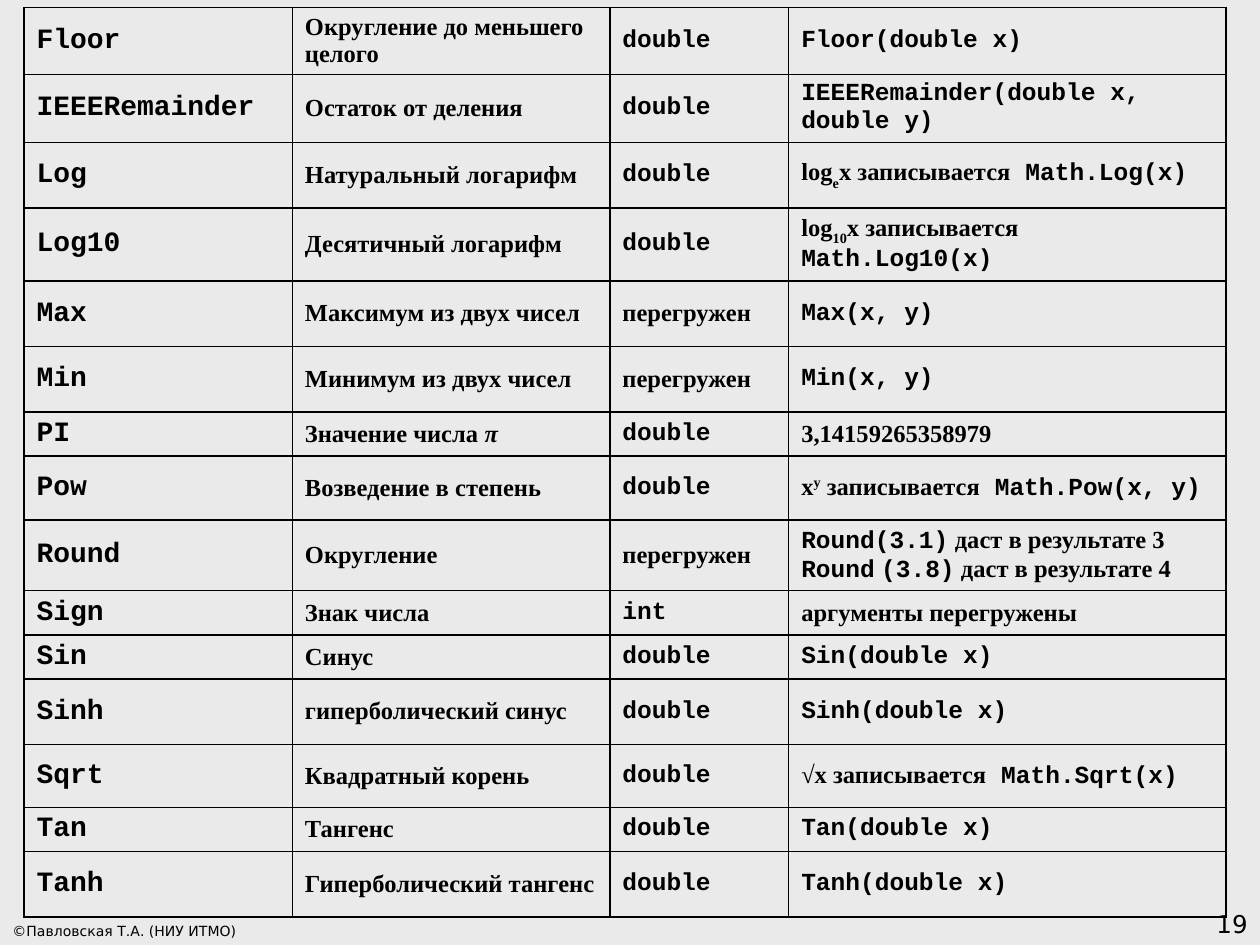
"""Build a slide with a reference table of the Math class members."""
from dataclasses import dataclass
from typing import NamedTuple

from lxml.etree import SubElement as Sub
from pptx import Presentation as Deck
from pptx.dml.color import RGBColor as Rgb
from pptx.enum.text import MSO_ANCHOR as Anchor, PP_ALIGN as Align
from pptx.oxml.ns import qn
from pptx.util import Inches, Pt


@dataclass(frozen=True)
class Theme:
    ink: str = "000000"
    back: str = "EAEAEA"
    code: str = "Courier New"
    prose: str = "Times New Roman"
    plain: str = "DejaVu Sans"
    name: int = 16
    body: int = 14
    small: int = 8
    rule: int = 1


class Run(NamedTuple):
    text: str
    face: str
    shift: int = 0
    slant: bool = False


class Row(NamedTuple):
    name: str
    about: list[Run]
    kind: Run
    use: list[Run]
    tall: float = 0.52


class Note(NamedTuple):
    text: str
    box: tuple[float, float, float, float]
    size: int
    align: Align


LOOK = Theme()


def code(text: str) -> Run:
    return Run(text, LOOK.code)


def prose(text: str, shift: int = 0, slant: bool = False) -> Run:
    return Run(text, LOOK.prose, shift, slant)


REAL = code("double")
MANY = prose("перегружен")
LOW = 0.35
PAD = 0.03
WIDTHS = (2.13, 2.52, 1.42, 3.47)
ROWS = (
    Row("Floor", [prose("Округление до меньшего целого")], REAL,
        [code("Floor(double х)")], 0.53),
    Row("IEEERemainder", [prose("Остаток от деления")], REAL,
        [code("IEEERemainder(double x, double y)")], 0.54),
    Row("Log", [prose("Натуральный логарифм")], REAL,
        [prose("log"), prose("e", -30), prose("x записывается"), code(" Math.Log(x)")]),
    Row("Log10", [prose("Десятичный логарифм")], REAL,
        [prose("log"), prose("10", -30), prose("x записывается"), code(" Math.Log10(x)")],
        0.58),
    Row("Max", [prose("Максимум из двух чисел")], MANY, [code("Max(x, y)")]),
    Row("Min", [prose("Минимум из двух чисел")], MANY, [code("Min(x, y)")]),
    Row("PI", [prose("Значение числа "), prose("π", slant=True)], REAL,
        [prose("3,14159265358979")], LOW),
    Row("Pow", [prose("Возведение в степень")], REAL,
        [prose("x"), prose("y", 30), prose(" записывается"), code(" Math.Pow(x, y)")], 0.51),
    Row("Round", [prose("Округление")], MANY,
        [code("Round(3.1)"), prose(" даст в результате 3 "), code("Round"),
         prose(" "), code("(3.8)"), prose(" даст в результате 4")], 0.56),
    Row("Sign", [prose("Знак числа")], code("int"), [prose("аргументы перегружены")], LOW),
    Row("Sin", [prose("Синус")], REAL, [code("Sin(double x)")], LOW),
    Row("Sinh", [prose("гиперболический синус")], REAL, [code("Sinh(double x)")]),
    Row("Sqrt", [prose("Квадратный корень")], REAL,
        [prose("√x записывается"), code(" Math.Sqrt(x)")], 0.5),
    Row("Tan", [prose("Тангенс")], REAL, [code("Tan(double x)")], LOW),
    Row("Tanh", [prose("Гиперболический тангенс")], REAL, [code("Tanh(double x)")]),
)
NOTES = (
    Note("©Павловская Т.А. (НИУ ИТМО)", (0, 7.22, 3.11, 0.28), LOOK.small, Align.LEFT),
    Note("19", (7.92, 7, 2.08, 0.5), LOOK.body, Align.RIGHT),
)


def write(para, runs: list[Run], size: int, bold: bool) -> None:
    faces = {run.face for run in runs}
    font = para.font
    font.size, font.bold = Pt(size), bold
    font.color.rgb = Rgb.from_string(LOOK.ink)
    if len(faces) == 1:
        font.name = runs[0].face
    for run in runs:
        part = para.add_run()
        part.text = run.text
        if len(faces) > 1:
            part.font.name = run.face
        if run.slant:
            part.font.italic = True
        if run.shift:
            part.font._element.set("baseline", str(run.shift * 1000))


def edge(cell) -> None:
    props = cell._tc.get_or_add_tcPr()
    for spot, side in enumerate(("lnL", "lnR", "lnT", "lnB")):
        line = Sub(props, qn(f"a:{side}"), w=str(Pt(LOOK.rule)))
        Sub(Sub(line, qn("a:solidFill")), qn("a:srgbClr"), val=LOOK.ink)
        props.insert(spot, line)


def fill(cell, runs: list[Run], size: int) -> None:
    cell.fill.background()
    cell.vertical_anchor = Anchor.MIDDLE
    cell.margin_top = cell.margin_bottom = Inches(PAD)
    edge(cell)
    write(cell.text_frame.paragraphs[0], runs, size, True)


def grid(slide) -> None:
    tall = sum(row.tall for row in ROWS)
    table = slide.shapes.add_table(
        len(ROWS), len(WIDTHS), Inches(0.19), Inches(0.06),
        Inches(sum(WIDTHS)), Inches(tall)).table
    table.first_row = table.horz_banding = False
    for col, width in zip(table.columns, WIDTHS):
        col.width = Inches(width)
    for line, row in zip(table.rows, ROWS):
        line.height = Inches(row.tall)
        name, *rest = line.cells
        fill(name, [code(row.name)], LOOK.name)
        for cell, runs in zip(rest, (row.about, [row.kind], row.use)):
            fill(cell, runs, LOOK.body)


def label(slide, note: Note) -> None:
    frame = slide.shapes.add_textbox(*map(Inches, note.box)).text_frame
    frame.word_wrap = True
    frame.vertical_anchor = Anchor.BOTTOM
    para = frame.paragraphs[0]
    para.alignment = note.align
    write(para, [Run(note.text, LOOK.plain)], note.size, False)


def main() -> None:
    deck = Deck()
    deck.slide_width, deck.slide_height = Inches(10), Inches(7.5)
    slide = deck.slides.add_slide(deck.slide_layouts[6])
    back = slide.background.fill
    back.solid()
    back.fore_color.rgb = Rgb.from_string(LOOK.back)
    for note in NOTES:
        label(slide, note)
    grid(slide)
    deck.save("out.pptx")


if __name__ == "__main__":
    main()
